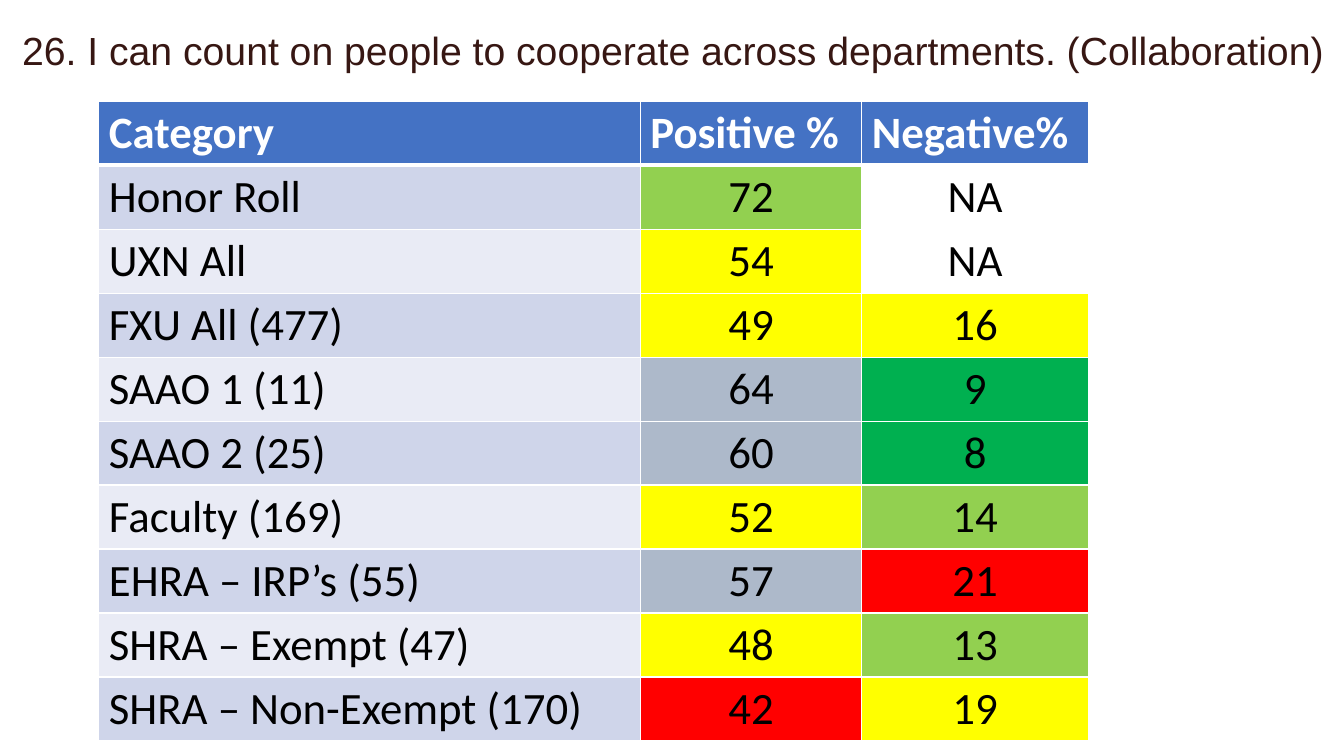
from dataclasses import dataclass

from lxml import etree
from pptx import Presentation
from pptx.dml.color import RGBColor
from pptx.enum.text import MSO_ANCHOR, MSO_AUTO_SIZE, PP_ALIGN
from pptx.oxml.ns import qn
from pptx.util import Pt

LEFT, CENTER = PP_ALIGN.LEFT, PP_ALIGN.CENTER
TOP = MSO_ANCHOR.TOP
GROW = MSO_AUTO_SIZE.SHAPE_TO_FIT_TEXT


@dataclass(frozen=True)
class Theme:
    title: str = "371713"
    head: str = "4472C4"
    light: str = "FFFFFF"
    dark: str = "000000"
    bands: tuple = ("CFD5EA", "E9EBF5")
    lime: str = "92D050"
    yellow: str = "FFFF00"
    grey: str = "ADB9CA"
    green: str = "00B050"
    red: str = "FF0000"
    title_size: int = 28
    cell_size: int = 32


theme = Theme()


def style(para, name, size, color, bold, align):
    para.alignment = align
    para.font.color.rgb = RGBColor.from_string(color)
    for key, value in {"name": name, "size": Pt(size), "bold": bold}.items():
        setattr(para.font, key, value)


def edge(cell, side, width):
    """Draw a light border on one side; call before the cell is filled."""
    line = etree.SubElement(cell._tc.get_or_add_tcPr(), qn(f"a:ln{side}"), w=str(Pt(width)))
    fill = etree.SubElement(line, qn("a:solidFill"))
    etree.SubElement(fill, qn("a:srgbClr"), val=theme.light)


deck = Presentation()
deck.slide_width, deck.slide_height = Pt(960), Pt(540)
slide = deck.slides.add_slide(deck.slide_layouts[5])

title = slide.shapes.title
box = {"left": 8.6, "top": 15.1, "width": 951.8, "height": 41}
for key, value in box.items():
    setattr(title, key, Pt(value))
frame = title.text_frame
frame.text = "26. I can count on people to cooperate across departments. (Collaboration)"
for key, value in {"word_wrap": True, "auto_size": GROW, "vertical_anchor": TOP}.items():
    setattr(frame, key, value)
style(frame.paragraphs[0], "Arial", theme.title_size, theme.title, False, LEFT)

heads = ("Category", "Positive %", "Negative%")
scores = (
    ("Honor Roll", "72", theme.lime, "NA", None),
    ("UXN All", "54", theme.yellow, "NA", None),
    ("FXU All (477)", "49", theme.yellow, "16", theme.yellow),
    ("SAAO 1 (11)", "64", theme.grey, "9", theme.green),
    ("SAAO 2 (25)", "60", theme.grey, "8", theme.green),
    ("Faculty (169)", "52", theme.yellow, "14", theme.lime),
    ("EHRA – IRP’s (55)", "57", theme.grey, "21", theme.red),
    ("SHRA – Exempt (47)", "48", theme.yellow, "13", theme.lime),
    ("SHRA – Non-Exempt (170)", "42", theme.red, "19", theme.yellow),
)
rows = [[(text, theme.head) for text in heads]]
for i, (group, good, good_fill, bad, bad_fill) in enumerate(scores):
    rows.append([(group, theme.bands[i % 2]), (good, good_fill), (bad, bad_fill)])

widths = (386.8, 158.2, 162)
height = 45.7
table = slide.shapes.add_table(
    len(rows), len(widths), Pt(70.6), Pt(72.3), Pt(sum(widths)), Pt(height * len(rows))
).table
for col, width in zip(table.columns, widths):
    col.width = Pt(width)

for r, row in enumerate(rows):
    table.rows[r].height = Pt(height)
    head = r == 0
    for c, (text, fill) in enumerate(row):
        cell = table.cell(r, c)
        cell.text = text
        cell.margin_top = cell.margin_bottom = Pt(3.2)
        for side in "LRTB":
            edge(cell, side, 3 if (head and side == "B") or (r == 1 and side == "T") else 1)
        if fill:
            cell.fill.solid()
            cell.fill.fore_color.rgb = RGBColor.from_string(fill)
        else:
            cell.fill.background()
        style(
            cell.text_frame.paragraphs[0],
            "Calibri",
            theme.cell_size,
            theme.light if head else theme.dark,
            head,
            LEFT if head or c == 0 else CENTER,
        )

deck.save("out.pptx")
